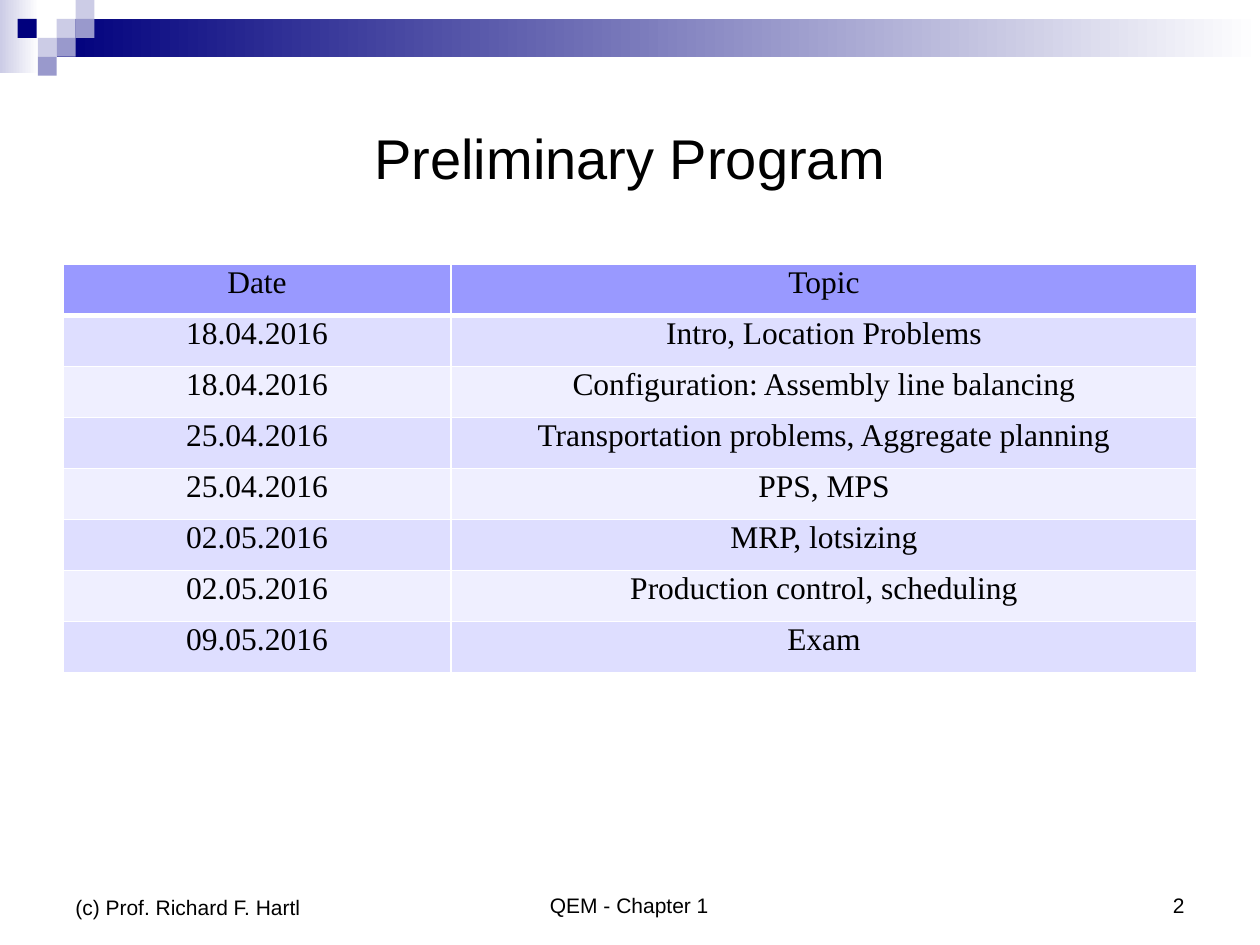
from lxml.etree import SubElement
from pptx import Presentation
from pptx.dml.color import RGBColor
from pptx.enum.shapes import MSO_SHAPE
from pptx.enum.text import MSO_ANCHOR, PP_ALIGN
from pptx.oxml.ns import qn
from pptx.util import Pt

PX = 9144  # EMU per px, 100 px to the inch
NAVY, LILAC, VIOLET, WHITE, BLACK = "00007D", "CCCCE6", "9999CC", "FFFFFF", "000000"
HEADER_FILL, BAND_FILLS = "9999FF", ("DEDEFF", "EFEFFF")
PROGRAM = [
    ("Date", "Topic"),
    ("18.04.2016", "Intro, Location Problems"),
    ("18.04.2016", "Configuration: Assembly line balancing"),
    ("25.04.2016", "Transportation problems, Aggregate planning"),
    ("25.04.2016", "PPS, MPS"),
    ("02.05.2016", "MRP, lotsizing"),
    ("02.05.2016", "Production control, scheduling"),
    ("09.05.2016", "Exam"),
]


def color(hex_string):
    return RGBColor.from_string(hex_string)


def emu(*lengths):
    return [length * PX for length in lengths]


def write(text_frame, text, font_name, size, alignment):
    paragraph = text_frame.paragraphs[0]
    paragraph.alignment = alignment
    run = paragraph.add_run()
    run.text = text
    run.font.name = font_name
    run.font.size = Pt(size)
    run.font.color.rgb = color(BLACK)


def add_block(slide, box, start, end=None):
    """Add a borderless rectangle, fading from start to end if end is given."""
    shape = slide.shapes.add_shape(MSO_SHAPE.RECTANGLE, *emu(*box))
    shape.shadow.inherit = False
    shape.line.fill.background()
    if end is None:
        shape.fill.solid()
        shape.fill.fore_color.rgb = color(start)
        return
    shape.fill.gradient()
    shape.fill.gradient_angle = 0
    for stop, hex_string in zip(shape.fill.gradient_stops, (start, end)):
        stop.color.rgb = color(hex_string)


def add_banner(slide, box):
    left, top, width, height = box
    side = 15
    add_block(slide, (left, top, 31, height - 2), LILAC, WHITE)
    add_block(slide, (left + 45, top + side, width - 45, 2 * side), NAVY, WHITE)
    squares = [(45, 15, LILAC), (60, 0, LILAC), (60, 15, VIOLET), (30, 30, LILAC),
               (14, 15, NAVY), (45, 30, VIOLET), (30, 45, VIOLET)]
    for x, y, fill in squares:
        add_block(slide, (left + x, top + y, side, side), fill)


def place_title(slide, box, text):
    title = slide.shapes.title
    title.left, title.top, title.width, title.height = emu(*box)
    title.text_frame.vertical_anchor = MSO_ANCHOR.MIDDLE
    write(title.text_frame, text, "Arial", 32, PP_ALIGN.CENTER)


def set_borders(cell, bottom_width):
    properties = cell._tc.get_or_add_tcPr()
    for side, width in (("L", 1), ("R", 1), ("T", 1), ("B", bottom_width)):
        line = SubElement(properties, qn(f"a:ln{side}"), w=str(Pt(width)))
        fill = SubElement(line, qn("a:solidFill"))
        SubElement(fill, qn("a:srgbClr"), val=WHITE)


def add_program(slide, box, rows):
    left, top, width, height = emu(*box)
    frame = slide.shapes.add_table(len(rows), 2, left, top, width, height)
    table = frame.table
    date_width = 308 * PX
    table.columns[0].width = date_width
    table.columns[1].width = width - date_width
    for row_index, texts in enumerate(rows):
        table.rows[row_index].height = height // len(rows)
        is_header = row_index == 0
        for column_index, text in enumerate(texts):
            cell = table.cell(row_index, column_index)
            set_borders(cell, 3 if is_header else 1)
            cell.fill.solid()
            cell.fill.fore_color.rgb = color(
                HEADER_FILL if is_header else BAND_FILLS[(row_index - 1) % 2])
            cell.margin_left = cell.margin_right = cell.margin_top = PX
            cell.margin_bottom = 0
            write(cell.text_frame, text, "Times New Roman", 18, PP_ALIGN.CENTER)


def add_footer(slide, box):
    left, top, width, height = box
    side, middle = 233, 317
    parts = [
        ("QEM - Chapter 1", (width - middle) // 2, middle, height, PP_ALIGN.CENTER),
        ("2", width - side, side, height, PP_ALIGN.RIGHT),
        ("(c) Prof. Richard F. Hartl", 0, side, height + 2, PP_ALIGN.LEFT),
    ]
    for text, x, part_width, part_height, alignment in parts:
        shape = slide.shapes.add_textbox(*emu(left + x, top, part_width, part_height))
        shape.text_frame.word_wrap = True
        shape.text_frame.vertical_anchor = MSO_ANCHOR.BOTTOM
        write(shape.text_frame, text, "Arial", 12, alignment)


def main():
    presentation = Presentation()
    presentation.slide_width, presentation.slide_height = emu(1000, 750)
    slide = presentation.slides.add_slide(presentation.slide_layouts[5])
    add_banner(slide, (0, 0, 1000, 60))
    place_title(slide, (50, 50, 900, 150), "Preliminary Program")
    add_program(slide, (50, 210, 900, 324), PROGRAM)
    add_footer(slide, (50, 683, 900, 50))
    presentation.save("out.pptx")


if __name__ == "__main__":
    main()
